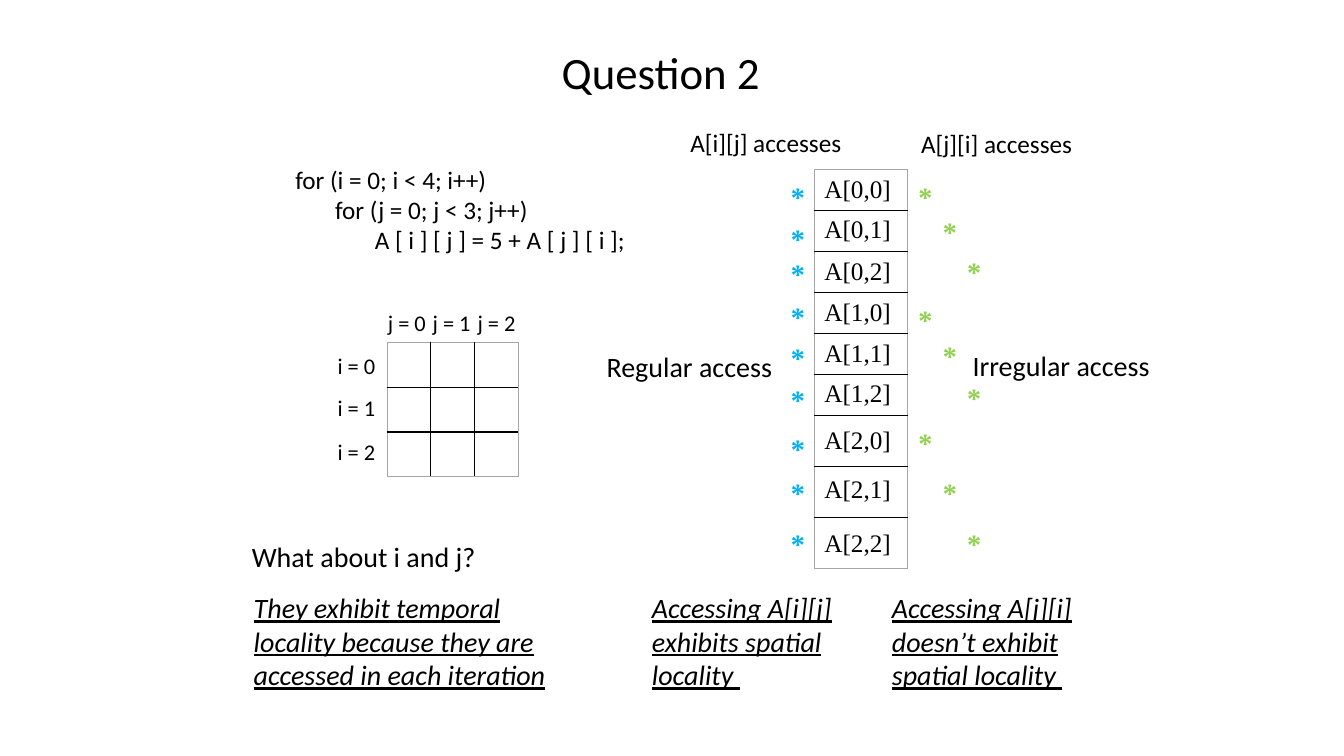
from pptx import Presentation
from pptx import util as u
from pptx.dml.color import RGBColor
from pptx.enum import text
from pptx.oxml import parse_xml
from pptx.oxml.ns import nsdecls

COLORS = {"ink": "000000", "regular": "00B0F0", "irregular": "92D050", "frame": "A6A6A6"}
SANS, SERIF = "Calibri", "Times New Roman"
N = 3  # matrix side


class Deck:
    """Holds the style and the current slide."""

    def __init__(self, width, height):
        self.prs = Presentation()
        self.prs.slide_width, self.prs.slide_height = u.Pt(width), u.Pt(height)
        self.s = self.prs.slides.add_slide(self.prs.slide_layouts[5])

    def fill_text(self, tf, lines, size, color="ink", font=SANS, indent=0, align=None, **extra):
        fmt = {"name": font, "size": u.Pt(size), **extra}
        for i, line in enumerate(lines):
            p = tf.paragraphs[0] if i == 0 else tf.add_paragraph()
            p.alignment = align
            if indent * i:
                p._p.get_or_add_pPr().set("marL", str(u.Pt(indent * i)))
            r = p.add_run()
            r.text = line
            for key, value in fmt.items():
                setattr(r.font, key, value)
            r.font.color.rgb = RGBColor.from_string(COLORS[color])

    def title(self, line, x, y, w, h, size):
        sp = self.s.shapes.title
        place = {"left": x, "top": y, "width": w, "height": h}
        for key, value in place.items():
            setattr(sp, key, u.Pt(value))
        tf = sp.text_frame
        tf.auto_size = text.MSO_AUTO_SIZE.NONE
        tf.vertical_anchor = text.MSO_ANCHOR.MIDDLE
        self.fill_text(tf, [line], size, align=text.PP_ALIGN.CENTER)

    def text(self, lines, x, y, w, h, size, wrap=False, **style):
        sp = self.s.shapes.add_textbox(*map(u.Pt, (x, y, w, h)))
        tf = sp.text_frame
        tf.word_wrap = wrap
        tf.auto_size = text.MSO_AUTO_SIZE.SHAPE_TO_FIT_TEXT
        self.fill_text(tf, lines, size, **style)

    def border(self, cell, side, index, outer):
        color, width = ("frame", 0.5) if outer else ("ink", 1)
        ln = parse_xml(
            f'<a:{side} {nsdecls("a")} w="{u.Pt(width)}"><a:solidFill>'
            f'<a:srgbClr val="{COLORS[color]}"/></a:solidFill></a:{side}>')
        cell._tc.get_or_add_tcPr().insert(index, ln)

    def grid(self, x, y, widths, heights):
        rows, cols = len(heights), len(widths)
        gf = self.s.shapes.add_table(
            rows, cols, *map(u.Pt, (x, y, sum(widths), sum(heights))))
        tbl = gf.table
        tbl.first_row = tbl.horz_banding = False
        for col, width in zip(tbl.columns, widths):
            col.width = u.Pt(width)
        for row, height in zip(tbl.rows, heights):
            row.height = u.Pt(height)
        for i in range(rows):
            for j in range(cols):
                cell = tbl.cell(i, j)
                cell.fill.background()
                cell.text_frame.paragraphs[0].font.size = u.Pt(16)
                sides = {"lnL": j == 0, "lnR": j == cols - 1,
                         "lnT": i == 0, "lnB": i == rows - 1}
                for index, (side, outer) in enumerate(sides.items()):
                    self.border(cell, side, index, outer)


def main():
    d = Deck(960, 540)
    d.title("Question 2", 64, 6, 816, 90, 32)

    # Loop code
    d.text(["for (i = 0; i < 4; i++)", "for (j = 0; j < 3; j++)",
            "A [ i ] [ j ] = 5 + A [ j ] [ i ];"],
           203.8, 113.8, 292, 72.7, 18, wrap=True, indent=28.4)

    # Matrix with its indices
    d.grid(276.5, 244.8, [31.2] * N, [31.9] * N)
    for k, y in enumerate((247.7, 277.9, 309.6)):
        d.text([f"i = {k}"], 234, y, 41.8, 26.6, 16)
        d.text([f"j = {k}"], 270 + 32 * k, 217.4, 41.8, 26.6, 16)

    # Memory column with the accesses on either side
    d.grid(581.8, 121, [66.2], [29.3] * 6 + [36.5] * 3)
    label_tops = (120.2, 149, 178.6, 208.1, 237.6, 265.7, 299.5, 334.8, 373)
    regular_tops = (124.6, 154.8, 180, 210.2, 239.8, 270, 304.6, 336.2, 372.2)
    irregular_tops = (124.6, 149.8, 178.6, 212.4, 238.3, 268.6, 300.2, 336.2, 372.2)
    for k, (label, left, right) in enumerate(zip(label_tops, regular_tops, irregular_tops)):
        i, j = divmod(k, N)
        d.text([f"A[{i},{j}]"], 581.8, label, 62.6, 28.8, 18, font=SERIF)
        for x, y, color in ((557.8, left, "regular"), (649 + 17.4 * j, right, "irregular")):
            d.text(["*"], x, y, 24.5, 31.7, 20, color=color, font=SERIF, bold=True)

    # Column headings and access kinds
    for line, x, y, w, h, size in (
            ("A[i][j] accesses", 486, 87.1, 123.1, 28.8, 18),
            ("A[j][i] accesses", 650.9, 87.8, 123.1, 28.8, 18),
            ("Regular access", 426.2, 246.2, 133.9, 31.7, 20),
            ("Irregular access", 687.6, 245.5, 142.6, 31.7, 20)):
        d.text([line], x, y, w, h, size)

    # Question and answers
    d.text(["What about i and j?"], 172.8, 381.6, 283, 31.7, 20, wrap=True)
    for line, x, w in (
            ("They exhibit temporal locality because they are accessed in each iteration",
             174.2, 239.8),
            ("Accessing A[i][j] exhibits spatial locality ", 458.6, 159.1),
            ("Accessing A[j][i] doesn’t exhibit spatial locality ", 630, 159.1)):
        d.text([line], x, 418.3, w, 79.9, 20, wrap=True, italic=True, underline=True)

    d.prs.save("out.pptx")


if __name__ == "__main__":
    main()
